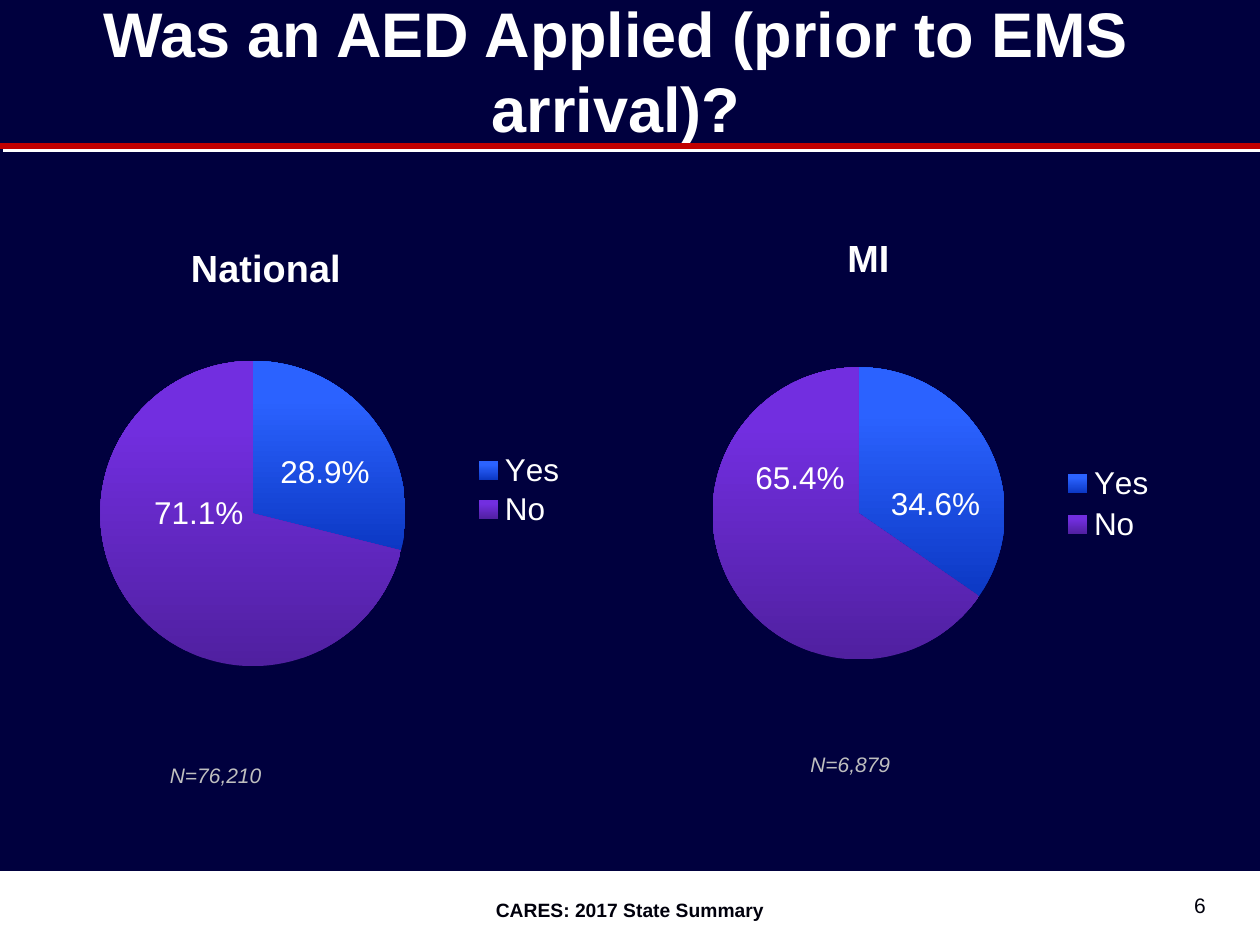
from dataclasses import dataclass

from lxml.etree import SubElement
from pptx import Presentation
from pptx.chart.data import CategoryChartData
from pptx.dml.color import RGBColor
from pptx.enum.chart import XL_CHART_TYPE, XL_LEGEND_POSITION
from pptx.enum.shapes import MSO_CONNECTOR, MSO_SHAPE
from pptx.enum.text import MSO_ANCHOR, PP_ALIGN
from pptx.oxml import parse_xml
from pptx.oxml.ns import nsdecls, qn
from pptx.util import Pt

NAVY = RGBColor(0x00, 0x00, 0x3E)
WHITE = RGBColor(0xFF, 0xFF, 0xFF)
INK = RGBColor(0x00, 0x00, 0x0C)
RED = RGBColor(0xC0, 0x00, 0x00)
GRAY = RGBColor(0xBF, 0xBF, 0xBF)
# Dark and bright ends of each slice's shading
SHADES = (
    (RGBColor(0x0C, 0x38, 0xC4), RGBColor(0x2B, 0x62, 0xFF)),
    (RGBColor(0x50, 0x20, 0xA0), RGBColor(0x72, 0x2E, 0xE0)),
)
FACE = "Arial"


@dataclass
class Label:
    text: str
    box: tuple
    size: int
    color: RGBColor
    align: PP_ALIGN = PP_ALIGN.LEFT
    anchor: MSO_ANCHOR = MSO_ANCHOR.TOP
    bold: bool = False
    italic: bool = False


@dataclass
class Pie:
    """Places inside the chart are fractions of its frame."""
    title: str
    box: tuple
    vals: tuple
    head: tuple
    plot: tuple
    key: tuple
    shifts: tuple


LABELS = (
    Label("CARES: 2017 State Summary", (246, 510, 228, 21), 11, INK,
          PP_ALIGN.CENTER, bold=True),
    Label("6", (528, 504, 168, 24), 12, INK, PP_ALIGN.RIGHT,
          MSO_ANCHOR.BOTTOM),
    Label("N=6,879", (456, 426, 103, 22), 12, GRAY, italic=True),
    Label("N=76,210", (90, 432, 103, 22), 12, GRAY, italic=True),
)
PIES = (
    Pie("MI", (348, 90, 348, 360), (34.6, 65.4), (0.38, 0.11),
        (0.17, 0.33, 0.48, 0.47), (0.74, 0.48, 0.16, 0.14),
        ((0.02, 0.04), (0.01, -0.11))),
    Pie("National", (6, 102, 342, 336), (28.9, 71.1), (0.29, 0.1),
        (0.15, 0.31, 0.51, 0.52), (0.77, 0.46, 0.16, 0.14),
        ((0.02, 0.01), (0.01, -0.08))),
)


def points(box: tuple) -> list:
    return [Pt(n) for n in box]


def style(font, size: float, color: RGBColor, bold=False, italic=False) -> None:
    font.name, font.size = FACE, Pt(size)
    font.bold, font.italic = bold, italic
    font.color.rgb = color


def place(node, spot: tuple, index: int, mode: str = "edge") -> None:
    """Give a chart part a manual layout as its child number index."""
    for old in node.findall(qn("c:layout")):
        node.remove(old)
    layout = parse_xml(f"<c:layout {nsdecls('c')}><c:manualLayout/></c:layout>")
    manual = layout[0]
    if node.tag == qn("c:plotArea"):
        SubElement(manual, qn("c:layoutTarget")).set("val", "inner")
    if mode == "edge":
        for tag in ("xMode", "yMode"):
            SubElement(manual, qn(f"c:{tag}")).set("val", mode)
    for tag, val in zip("xywh", spot):
        SubElement(manual, qn(f"c:{tag}")).set("val", str(val))
    node.insert(index, layout)


def add_percent(group, index: int, shift: tuple) -> None:
    """Add one slice's label, moved from the slice's middle."""
    flags = "".join(
        f'<c:show{name} val="{int(name == "Percent")}"/>'
        for name in ("LegendKey", "Val", "CatName", "SerName", "Percent",
                     "BubbleSize"))
    node = parse_xml(
        f'<c:dLbl {nsdecls("c")}><c:idx val="{index}"/>'
        '<c:numFmt formatCode="0.0%" sourceLinked="0"/>'
        f'<c:dLblPos val="ctr"/>{flags}</c:dLbl>')
    place(node, shift, 1, "factor")
    group.insert(index, node)


def add_pie(slide, pie: Pie) -> None:
    data = CategoryChartData(number_format="0.0")
    data.categories = ("Yes", "No")
    data.add_series("Series 1", pie.vals)
    chart = slide.shapes.add_chart(
        XL_CHART_TYPE.PIE, *points(pie.box), data).chart
    style(chart.font, 18, WHITE)

    chart.has_title = True
    frame = chart.chart_title.text_frame
    frame.text = pie.title
    style(frame.paragraphs[0].runs[0].font, 21.6, WHITE, bold=True)

    chart.has_legend = True
    chart.legend.position = XL_LEGEND_POSITION.RIGHT
    chart.legend.include_in_layout = False
    style(chart.legend.font, 18, WHITE)

    root = chart.element
    plot = chart.plots[0]
    plot.vary_by_categories = True
    series = plot.series[0]
    labels = series.data_labels
    labels.show_percentage, labels.show_value = True, False
    labels.number_format, labels.number_format_is_linked = "0.0%", False
    style(labels.font, 18, WHITE)
    group = root.find(f".//{qn('c:ser')}/{qn('c:dLbls')}")
    for index, (shades, shift) in enumerate(zip(SHADES, pie.shifts)):
        point = series.points[index]
        point.format.line.fill.background()
        fill = point.format.fill
        fill.gradient()
        fill.gradient_angle = 90
        for stop, color, spot in zip(fill.gradient_stops, shades, (0, 0.8)):
            stop.color.rgb, stop.position = color, spot
        add_percent(group, index, shift)
        style(point.data_label.font, 18, WHITE)

    for tag, spot, index in (("title", pie.head, 1), ("plotArea", pie.plot, 0),
                             ("legend", pie.key, 1)):
        place(root.find(f".//{qn('c:' + tag)}"), spot, index)


def add_label(slide, label: Label) -> None:
    frame = slide.shapes.add_textbox(*points(label.box)).text_frame
    frame.word_wrap = True
    frame.vertical_anchor = label.anchor
    frame.text = label.text
    para = frame.paragraphs[0]
    para.alignment = label.align
    style(para.runs[0].font, label.size, label.color, label.bold, label.italic)


def add_title(slide, text: str) -> None:
    title = slide.shapes.title
    title.left, title.top, title.width, title.height = points((9, 2, 686, 76))
    frame = title.text_frame
    frame.word_wrap = True
    frame.vertical_anchor = MSO_ANCHOR.MIDDLE
    frame.text = text
    para = frame.paragraphs[0]
    para.alignment = PP_ALIGN.CENTER
    style(para.runs[0].font, 36, WHITE, bold=True)


def add_rule(slide) -> None:
    """Draw the red line with its white offset shadow."""
    rule = slide.shapes.add_connector(
        MSO_CONNECTOR.STRAIGHT, *points((0, 83.5, 720, 83.5)))
    rule.line.color.rgb = RED
    rule.line.width = Pt(3)
    rule.element.spPr.append(parse_xml(
        f'<a:effectLst {nsdecls("a")}><a:outerShdw dist="{Pt(2.8)}" '
        f'dir="2700000" algn="ctr"><a:srgbClr val="{WHITE}"/>'
        '</a:outerShdw></a:effectLst>'))


def main() -> None:
    deck = Presentation()
    deck.slide_width, deck.slide_height = Pt(720), Pt(540)
    slide = deck.slides.add_slide(deck.slide_layouts[5])
    slide.background.fill.solid()
    slide.background.fill.fore_color.rgb = NAVY
    band = slide.shapes.add_shape(
        MSO_SHAPE.RECTANGLE, *points((0, 498, 720, 42)))
    band.shadow.inherit = False
    band.fill.solid()
    band.fill.fore_color.rgb = band.line.color.rgb = WHITE
    band.line.width = Pt(0.75)
    add_title(slide, "Was an AED Applied (prior to EMS arrival)?")
    add_rule(slide)
    for pie in PIES:
        add_pie(slide, pie)
    for label in LABELS:
        add_label(slide, label)
    deck.save("out.pptx")


if __name__ == "__main__":
    main()
